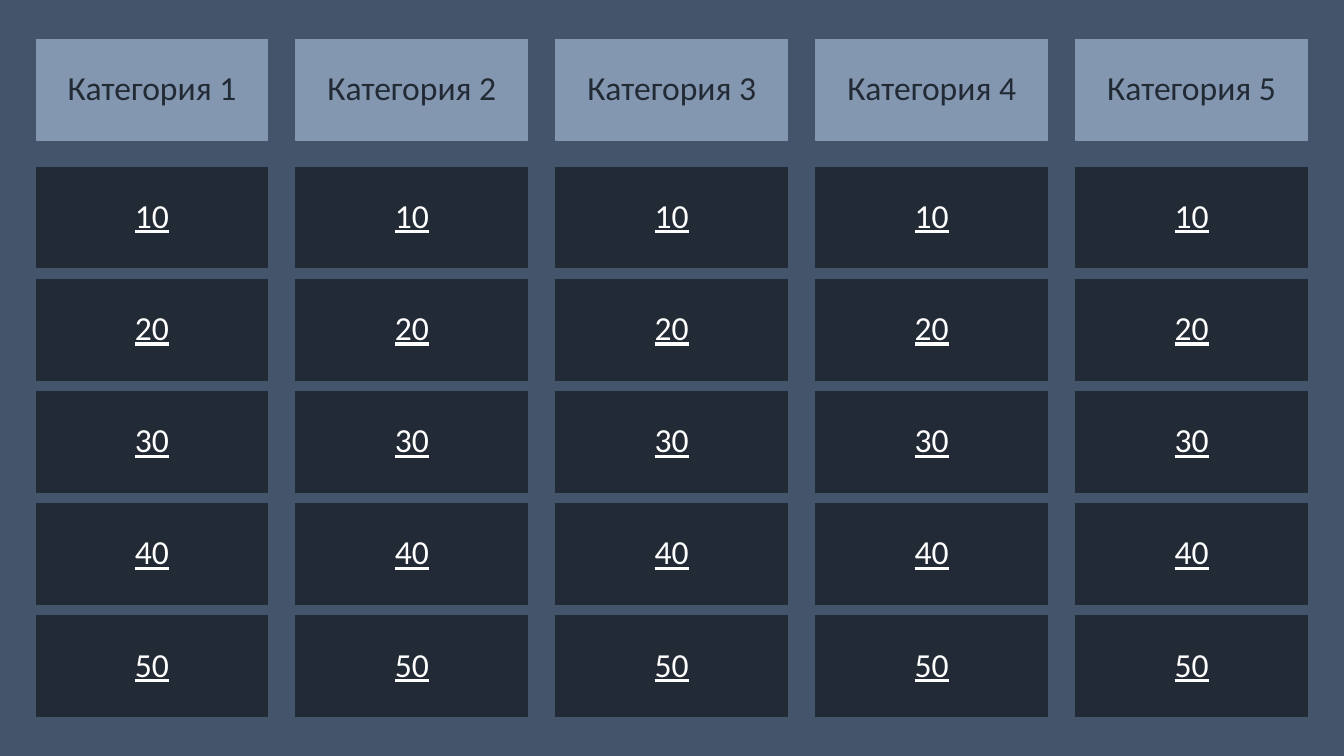
import pptx
import pptx.util
import pptx.dml.color
import pptx.enum.shapes
import pptx.enum.text

Cm = pptx.util.Cm
Pt = pptx.util.Pt
RGB = pptx.dml.color.RGBColor

SLATE = RGB(0x44, 0x54, 0x6A)
STEEL = RGB(0x84, 0x97, 0xB0)
NIGHT = RGB(0x22, 0x2A, 0x35)
WHITE = RGB(0xFF, 0xFF, 0xFF)

TOPICS = [f"Категория {n}" for n in range(1, 6)]
POINTS = ["10", "20", "30", "40", "50"]

BASE = {"name": "Calibri", "size": Pt(24)}
HEAD = {"fill": STEEL, "ink": NIGHT, "font": {**BASE, "underline": False}}
TILE = {"fill": NIGHT, "ink": WHITE, "font": {**BASE, "underline": True}}


def apply(item, values):
    for key, value in values.items():
        setattr(item, key, value)


def add_card(slide, text, box, style):
    rect = pptx.enum.shapes.MSO_SHAPE.RECTANGLE
    card = slide.shapes.add_shape(rect, *[Cm(side) for side in box])
    card.shadow.inherit = False
    for fill in (card.fill, card.line.fill):
        fill.solid()
        fill.fore_color.rgb = style["fill"]
    card.line.width = Pt(0.75)
    frame = card.text_frame
    apply(frame, {
        "text": text,
        "word_wrap": True,
        "vertical_anchor": pptx.enum.text.MSO_ANCHOR.MIDDLE,
    })
    para = frame.paragraphs[0]
    apply(para, {
        "alignment": pptx.enum.text.PP_ALIGN.CENTER,
        "line_spacing": 0.9,
    })
    font = para.runs[0].font
    apply(font, style["font"])
    font.color.rgb = style["ink"]


def add_column(slide, topic, box, high=2.54, space=0.68):
    left, top, width, height = box
    add_card(slide, topic, (left, top, width, high), HEAD)
    first = top + high + space
    step = (height - 2 * high - space) / (len(POINTS) - 1)
    for row, score in enumerate(POINTS):
        add_card(slide, score, (left, first + row * step, width, high), TILE)


def add_board(slide, box, gap=0.71):
    left, top, width, height = box
    step = (width + gap) / len(TOPICS)
    for col, topic in enumerate(TOPICS):
        add_column(slide, topic, (left + col * step, top, step - gap, height))


def main():
    deck = pptx.Presentation()
    apply(deck, {"slide_width": Cm(33.87), "slide_height": Cm(19.05)})
    slide = deck.slides.add_slide(deck.slide_layouts[6])
    back = slide.background.fill
    back.solid()
    back.fore_color.rgb = SLATE
    add_board(slide, (0.91, 0.99, 32.04, 17.07))
    deck.save("out.pptx")


if __name__ == "__main__":
    main()
